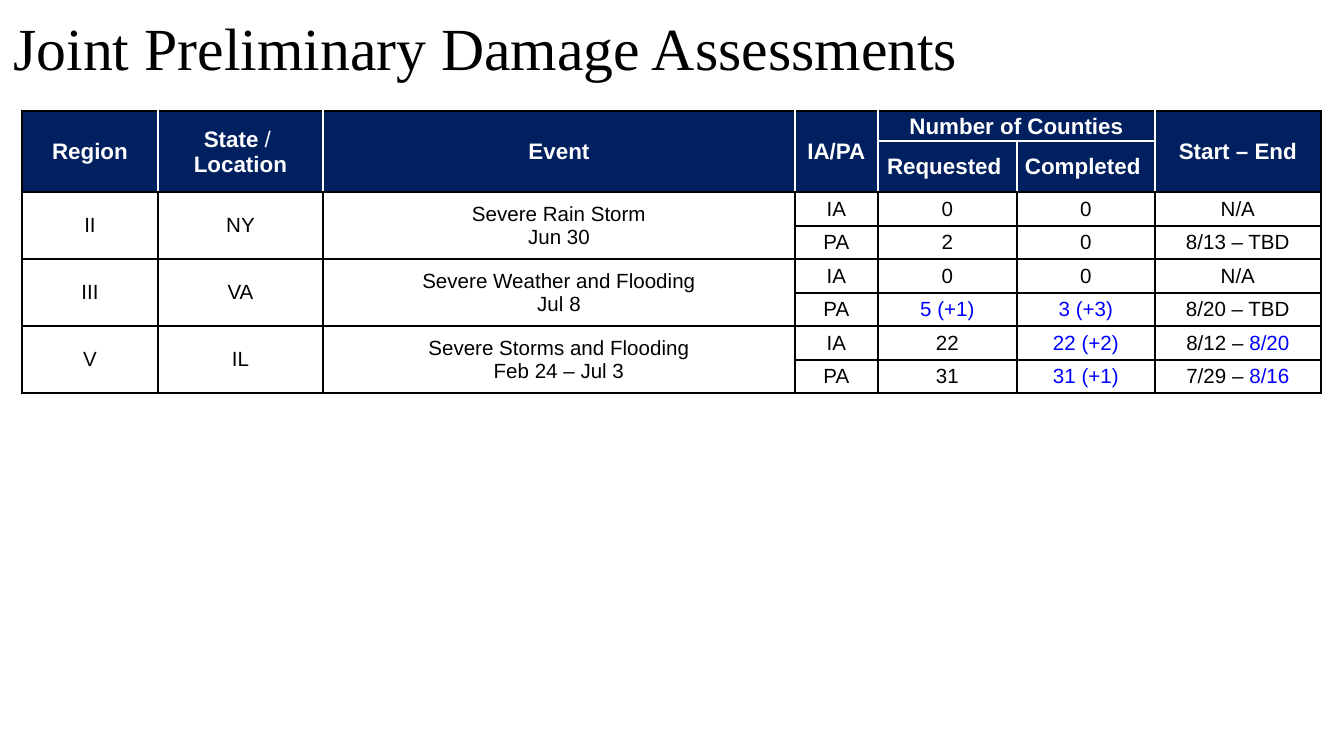
from lxml.etree import SubElement
from pptx import Presentation
from pptx.dml.color import RGBColor
from pptx.enum.text import MSO_ANCHOR as Anchor, PP_ALIGN as Align
from pptx.oxml.ns import qn
from pptx.util import Pt

EMU_PER_PX = 914400 / 134.4
COLORS = {"text": "000000", "header": "002060", "light": "FFFFFF", "update": "0000FF"}
COLUMN_WIDTHS = [136, 165, 472, 83, 139, 138, 166]
ROW_HEIGHTS = [30, 30] + [34, 33] * 3
HEADER_ROWS = 2
COUNTY_COLUMNS = (4, 5)
SPANNED_COLUMNS = (0, 1, 2)

# Every second part between bars is accented.
ROWS = [
    ["Region", "State| / \nLocation", "Event", "IA/PA", "Number of Counties", "", "Start – End"],
    ["", "", "", "", "Requested ", "Completed ", ""],
    ["II", "NY", "Severe Rain Storm\nJun 30", "IA", "0", "0", "N/A"],
    ["", "", "", "PA", "2", "0", "8/13 – TBD"],
    ["III", "VA", "Severe Weather and Flooding\nJul 8", "IA", "0", "0", "N/A"],
    ["", "", "", "PA", "|5 (+1)", "|3 (+3)", "8/20 – TBD"],
    ["V", "IL", "Severe Storms and Flooding\nFeb 24 – Jul 3", "IA", "22", "|22 (+2)", "8/12 – |8/20"],
    ["", "", "", "PA", "31", "|31 (+1)", "7/29 – |8/16"],
]


def px(length):
    return round(length * EMU_PER_PX)


def color(name):
    return RGBColor.from_string(COLORS[name])


def add_title(slide, text):
    title = slide.shapes.title
    title.left, title.top, title.width, title.height = 0, 0, px(1344), px(94)
    title.text_frame.text = text
    title.text_frame.vertical_anchor = Anchor.MIDDLE
    paragraph = title.text_frame.paragraphs[0]
    paragraph.alignment = Align.LEFT
    paragraph.font.name = "Times New Roman"
    paragraph.font.size = Pt(32)
    paragraph.font.color.rgb = color("text")


def set_borders(cell, row, column):
    header = row < HEADER_ROWS
    counties = column in COUNTY_COLUMNS
    light_sides = {
        "L": header and column > 0,
        "R": header and column < len(COLUMN_WIDTHS) - 1,
        "T": row == 1 and counties,
        "B": row == 0 and counties,
    }
    properties = cell._tc.get_or_add_tcPr()
    for side, light in light_sides.items():
        line = SubElement(properties, qn(f"a:ln{side}"), w=str(Pt(1)))
        fill = SubElement(line, qn("a:solidFill"))
        SubElement(fill, qn("a:srgbClr"), val=COLORS["light" if light else "text"])


def write_cell(cell, text, header):
    for index, line in enumerate(text.split("\n")):
        frame = cell.text_frame
        paragraph = frame.add_paragraph() if index else frame.paragraphs[0]
        paragraph.alignment = Align.CENTER
        paragraph.font.name = "Arial"
        paragraph.font.size = Pt(12 if header else 11)
        paragraph.font.color.rgb = color("light" if header else "text")
        paragraph.font.bold = header
        for position, part in enumerate(line.split("|")):
            if not part:
                continue
            run = paragraph.add_run()
            run.text = part
            if position % 2 and header:
                run.font.bold = False
            elif position % 2:
                run.font.color.rgb = color("update")


def format_cell(cell, row, column):
    header = row < HEADER_ROWS
    set_borders(cell, row, column)
    if header:
        cell.fill.solid()
        cell.fill.fore_color.rgb = color("header")
    else:
        cell.fill.background()
    cell.vertical_anchor = Anchor.MIDDLE
    side_margin = 8 if header else 9 if column in SPANNED_COLUMNS else 11
    cell.margin_left = cell.margin_right = px(side_margin)
    cell.margin_top = px(1 if header else 0)
    cell.margin_bottom = 0


def merge_cells(table):
    for column in range(len(COLUMN_WIDTHS)):
        if column not in COUNTY_COLUMNS:
            table.cell(0, column).merge(table.cell(1, column))
    first, last = COUNTY_COLUMNS
    table.cell(0, first).merge(table.cell(0, last))
    for row in range(HEADER_ROWS, len(ROWS), 2):
        for column in SPANNED_COLUMNS:
            table.cell(row, column).merge(table.cell(row + 1, column))


def add_assessment_table(slide):
    frame = slide.shapes.add_table(
        len(ROWS), len(COLUMN_WIDTHS), px(22), px(111),
        px(sum(COLUMN_WIDTHS)), px(sum(ROW_HEIGHTS)),
    )
    table = frame.table
    table.first_row = table.horz_banding = False
    for column, width in zip(table.columns, COLUMN_WIDTHS):
        column.width = px(width)
    for row, height in zip(table.rows, ROW_HEIGHTS):
        row.height = px(height)
    merge_cells(table)
    for row, texts in enumerate(ROWS):
        for column, text in enumerate(texts):
            cell = table.cell(row, column)
            format_cell(cell, row, column)
            write_cell(cell, text, row < HEADER_ROWS)


def main():
    presentation = Presentation()
    presentation.slide_width, presentation.slide_height = px(1344), px(756)
    slide = presentation.slides.add_slide(presentation.slide_layouts[5])
    add_title(slide, "Joint Preliminary Damage Assessments")
    add_assessment_table(slide)
    presentation.save("out.pptx")


if __name__ == "__main__":
    main()
